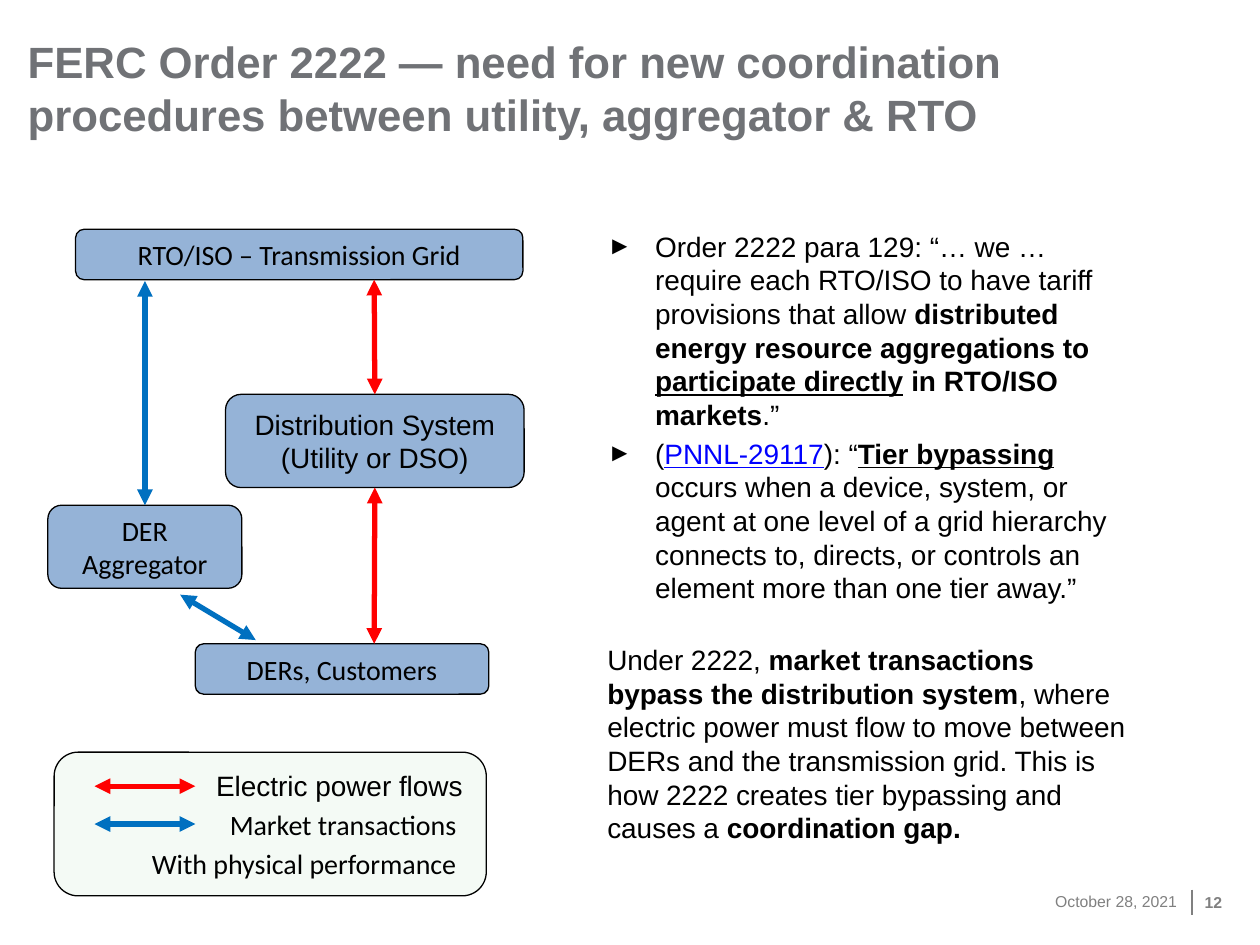
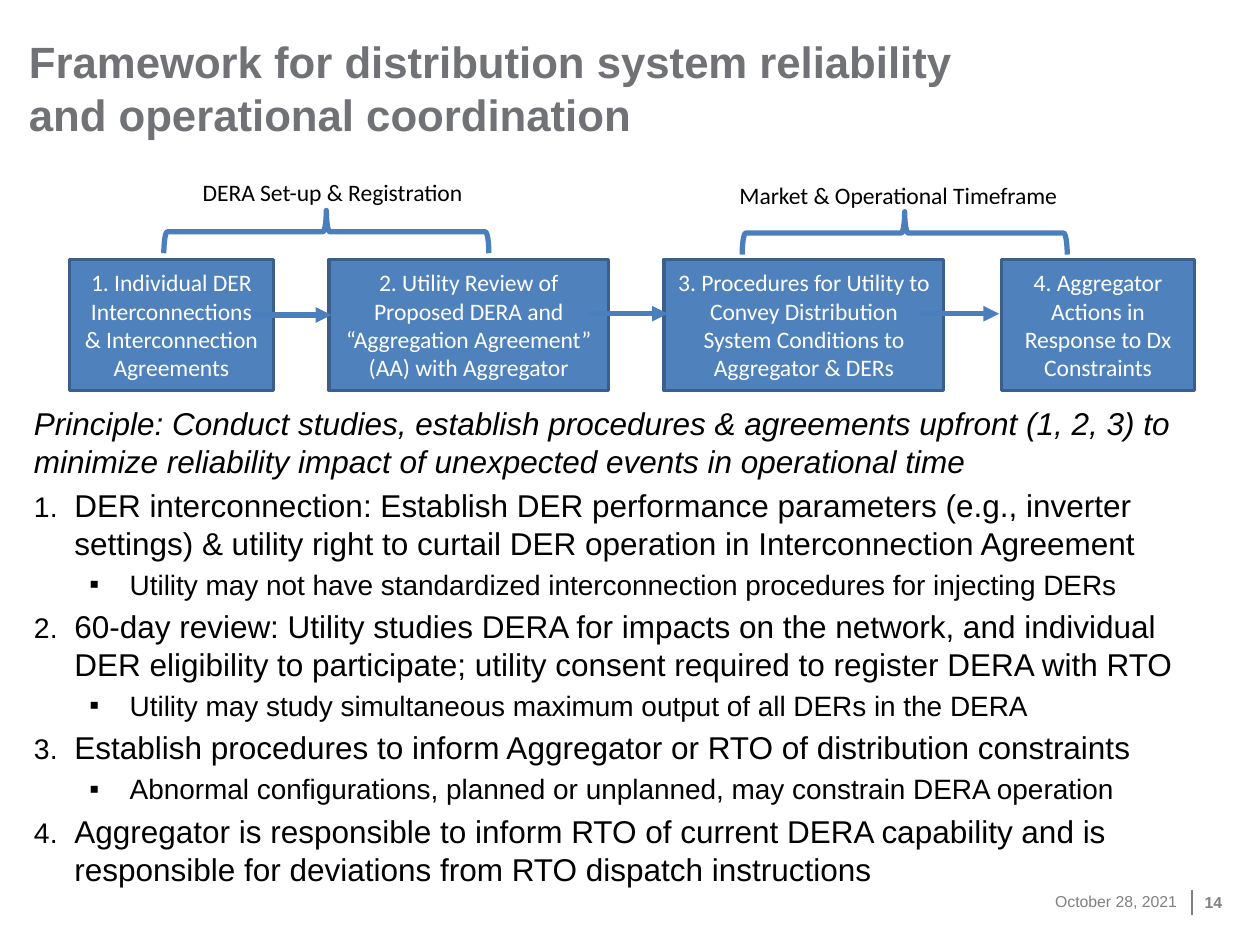
import pptx
import pptx.util
import pptx.dml.color
import pptx.enum.shapes
import pptx.enum.text
import pptx.oxml.ns
from lxml import etree

Inches = pptx.util.Inches
Pt = pptx.util.Pt
SHAPE = pptx.enum.shapes.MSO_SHAPE
ALIGN = pptx.enum.text.PP_ALIGN
ANCHOR = pptx.enum.text.MSO_ANCHOR

COLORS = {
    "title": "707276", "foot": "808080", "text": "000000", "white": "FFFFFF",
    "node": "95B3D7", "key": "F4FAF5", "power": "FF0000", "market": "0070C0",
    "step": "4F81BD", "edge": "3A5F8C", "flow": "4B7EBC", "link": "0000FF",
}


def color(name):
    return pptx.dml.color.RGBColor.from_string(COLORS[name])


def add_xml(parent, tag, **attrs):
    return etree.SubElement(parent, pptx.oxml.ns.qn(tag), attrs)


def style(font, size, hue="text", face="Arial", bold=None, italic=None):
    font.size, font.name = Pt(size), face
    font.bold, font.italic = bold, italic
    font.color.rgb = color(hue)


def set_frame(frame, anchor, pads):
    frame.word_wrap = True
    frame.vertical_anchor = anchor
    left, top, right, bottom = pads
    frame.margin_left, frame.margin_right = Inches(left), Inches(right)
    frame.margin_top, frame.margin_bottom = Inches(top), Inches(bottom)


def add_text(slide, box, text="", size=16, anchor=ANCHOR.TOP, pads=(0, 0, 0, 0),
             align=ALIGN.LEFT, **look):
    frame = slide.shapes.add_textbox(*map(Inches, box)).text_frame
    set_frame(frame, anchor, pads)
    if text:
        para = frame.paragraphs[0]
        para.text, para.alignment = text, align
        style(para.font, size, **look)
    return frame


def next_para(frame):
    """Use the empty first paragraph, then append new ones."""
    first = frame.paragraphs[0]
    return frame.add_paragraph() if first.runs else first


def add_para(frame, parts, size, before=0, bullet=None, indent=(0, 0), level=0,
             scale=100, italic=None):
    """Parts are (text, marks); marks: b bold, u underline, l link colour."""
    para = next_para(frame)
    for text, marks in parts:
        run = para.add_run()
        run.text = text
        if "b" in marks:
            run.font.bold = True
        if "u" in marks:
            run.font.underline = True
        if "l" in marks:
            run.font.color.rgb = color("link")
    para.level = level
    para.space_before = Pt(before)
    props = para._p.get_or_add_pPr()
    left, hang = indent
    props.set("marL", str(Inches(left)))
    props.set("indent", str(Inches(hang)))
    if bullet:
        add_xml(props, "a:buSzPct", val=str(scale * 1000))
        add_xml(props, "a:buFont", typeface="Arial")
        if bullet == "1.":
            add_xml(props, "a:buAutoNum", type="arabicPeriod")
        else:
            add_xml(props, "a:buChar", char=bullet)
    style(para.font, size, italic=italic)


def add_shape(slide, kind, box, fill, edge, width):
    shape = slide.shapes.add_shape(kind, *map(Inches, box))
    shape.shadow.inherit = False
    if fill:
        shape.fill.solid()
        shape.fill.fore_color.rgb = color(fill)
    else:
        shape.fill.background()
    shape.line.color.rgb = color(edge)
    shape.line.width = Pt(width)
    return shape


def add_node(slide, box, text, face="Calibri"):
    node = add_shape(slide, SHAPE.ROUNDED_RECTANGLE, box, "node", "text", 0.75)
    set_frame(node.text_frame, ANCHOR.MIDDLE, (0.13, 0.07, 0.13, 0.07))
    para = node.text_frame.paragraphs[0]
    para.text, para.alignment = text, ALIGN.CENTER
    style(para.font, 16, face=face)
    return node


def add_step(slide, box, text):
    step = add_shape(slide, SHAPE.RECTANGLE, box, "step", "edge", 2)
    set_frame(step.text_frame, ANCHOR.MIDDLE, (0.1, 0.05, 0.1, 0.05))
    para = step.text_frame.paragraphs[0]
    para.text, para.alignment = text, ALIGN.CENTER
    style(para.font, 13.5, "white", "Calibri")


def add_line(slide, start, end, hue, width=3, ends=()):
    line = slide.shapes.add_connector(
        pptx.enum.shapes.MSO_CONNECTOR.STRAIGHT, *map(Inches, start + end))
    line.line.color.rgb = color(hue)
    line.line.width = Pt(width)
    stroke = line.line._get_or_add_ln()
    for tag in ends:
        add_xml(stroke, "a:" + tag, type="triangle")
    add_xml(line._element.spPr, "a:effectLst")
    return line


def add_link(slide, start, end, hue):
    return add_line(slide, start, end, hue, ends=("headEnd", "tailEnd"))


def add_base(deck, title, box, page):
    """Blank slide with the shared title style and footer."""
    slide = deck.slides.add_slide(deck.slide_layouts[6])
    add_text(slide, (8.03, 6.95, 1.31, 0.4), "October 28, 2021", 9,
             ANCHOR.MIDDLE, align=ALIGN.RIGHT, hue="foot")
    add_line(slide, (9.46, 7.06), (9.46, 7.26), "foot", 1)
    add_text(slide, (9.56, 6.96, 0.25, 0.4), page, 9, ANCHOR.MIDDLE,
             hue="foot", bold=True)
    add_text(slide, box, title, 25, ANCHOR.BOTTOM, hue="title", bold=True)
    return slide


def add_key(slide):
    key = add_shape(slide, SHAPE.ROUNDED_RECTANGLE, (0.43, 5.97, 3.43, 1.14),
                    "key", "text", 0.75)
    frame = key.text_frame
    set_frame(frame, ANCHOR.MIDDLE, (0.13, 0.07, 0.13, 0.07))
    rows = [("Electric power flows", "Arial"),
            ("Market transactions ", "Calibri"),
            ("With physical performance ", "Calibri")]
    for num, (text, face) in enumerate(rows):
        para = next_para(frame)
        para.text, para.alignment = text, ALIGN.RIGHT
        para.space_before = Pt(3 if num else 0)
        style(para.font, 16, face=face)
    for y, hue in ((6.24, "power"), (6.54, "market")):
        add_link(slide, (0.75, y), (1.55, y), hue)


def build_order(deck):
    slide = add_base(
        deck, "FERC Order 2222 — need for new coordination procedures between "
        "utility, aggregator & RTO", (0.22, 0.27, 8.04, 0.84), "12")

    # Grid tiers and the flows between them
    add_node(slide, (0.6, 1.82, 3.55, 0.4), "RTO/ISO – Transmission Grid")
    system = add_node(slide, (1.79, 3.13, 2.37, 0.74),
                      "Distribution System (Utility or DSO)", "Arial")
    add_node(slide, (1.55, 5.11, 2.33, 0.4), "DERs, Customers")
    agent = add_node(slide, (0.38, 4.01, 1.54, 0.66), "DER Aggregator")
    lower = add_link(slide, (2.97, 3.87), (2.97, 5.11), "power")
    lower.begin_connect(system, 2)
    upper = add_link(slide, (2.97, 2.22), (2.97, 3.13), "power")
    upper.end_connect(system, 0)
    add_link(slide, (1.43, 4.72), (2.03, 5.08), "market")
    bypass = add_link(slide, (1.15, 2.23), (1.15, 4.01), "market")
    bypass.end_connect(agent, 0)
    add_key(slide)

    # Quotes and conclusion
    frame = add_text(slide, (4.82, 1.82, 4.14, 4.94))
    quote = dict(bullet="►", indent=(0.38, -0.38), scale=90)
    add_para(frame, [
        ("Order 2222 para 129: “… we … require each RTO/ISO to have tariff "
         "provisions that allow ", ""),
        ("distributed energy resource aggregations to ", "b"),
        ("participate directly", "bu"), (" in RTO/ISO markets", "b"),
        (".”", "")], 16, **quote)
    add_para(frame, [
        ("(", ""), ("PNNL-29117", "ul"), ("): “", ""),
        ("Tier bypassing", "bu"),
        (" occurs when a device, system, or agent at one level of a grid "
         "hierarchy connects to, directs, or controls an element more than "
         "one tier away.”", "")], 16, 3.2, **quote)
    add_para(frame, [
        ("Under 2222, ", ""),
        ("market transactions bypass the distribution system", "b"),
        (", where electric power must flow to move between DERs and the "
         "transmission grid. This is how 2222 creates tier bypassing and "
         "causes a ", ""),
        ("coordination gap.", "b")], 16, 22)


def build_frame(deck):
    slide = add_base(
        deck, "Framework for distribution system reliability and operational "
        "coordination", (0.23, 0.23, 7.56, 0.88), "14")

    # Principle and numbered duties
    frame = add_text(slide, (0.27, 3.21, 9.47, 3.96))
    add_para(frame, [(
        "Principle: Conduct studies, establish procedures & agreements upfront "
        "(1, 2, 3) to minimize reliability impact of unexpected events in "
        "operational time", "")], 18, italic=True)
    duties = [
        ("DER interconnection: Establish DER performance parameters (e.g., "
         "inverter settings) & utility right to curtail DER operation in "
         "Interconnection Agreement",
         "Utility may not have standardized interconnection procedures for "
         "injecting DERs"),
        ("60-day review: Utility studies DERA for impacts on the network, and "
         "individual DER eligibility to participate; utility consent required "
         "to register DERA with RTO",
         "Utility may study simultaneous maximum output of all DERs in the DERA"),
        ("Establish procedures to inform Aggregator or RTO of distribution "
         "constraints",
         "Abnormal configurations, planned or unplanned, may constrain DERA "
         "operation"),
        ("Aggregator is responsible to inform RTO of current DERA capability "
         "and is responsible for deviations from RTO dispatch instructions",
         None),
    ]
    for duty, note in duties:
        add_para(frame, [(duty, "")], 18, 3.6, "1.", (0.32, -0.32), scale=90)
        if note:
            add_para(frame, [(note, "")], 16, 3.2, "▪", (0.76, -0.32), level=1)

    # Process steps
    steps = [
        (0.55, 1.62, "1. Individual DER Interconnections & Interconnection "
                     "Agreements"),
        (2.61, 2.22, "2. Utility Review of Proposed DERA and “Aggregation "
                     "Agreement” (AA) with Aggregator"),
        (5.27, 2.22, "3. Procedures for Utility to Convey Distribution System "
                     "Conditions to Aggregator & DERs"),
        (7.95, 1.53, "4. Aggregator Actions in Response to Dx Constraints"),
    ]
    for left, width, text in steps:
        add_step(slide, (left, 2.06, width, 1.04), text)
    for x, y in ((2, 2.5), (4.67, 2.49), (7.3, 2.49)):
        add_line(slide, (x, y), (x + 0.63, y), "flow", ends=("tailEnd",))

    # Phases above the steps
    phases = [
        (2.42, 0.55, (1.51, 1.36, 2.34, 0.33), "DERA Set-up & Registration"),
        (7.01, 0.56, (5.77, 1.39, 2.88, 0.33), "Market & Operational Timeframe"),
    ]
    for left, top, box, text in phases:
        brace = add_shape(slide, SHAPE.RIGHT_BRACE, (left, top, 0.34, 2.58),
                          None, "flow", 3)
        brace.rotation = 270
        add_text(slide, box, text, 13.5, pads=(0.1, 0.05, 0.1, 0.05),
                 face="Calibri")


def main():
    deck = pptx.Presentation()
    deck.slide_width, deck.slide_height = Inches(10), Inches(7.5)
    build_order(deck)
    build_frame(deck)
    deck.save("out.pptx")


if __name__ == "__main__":
    main()
